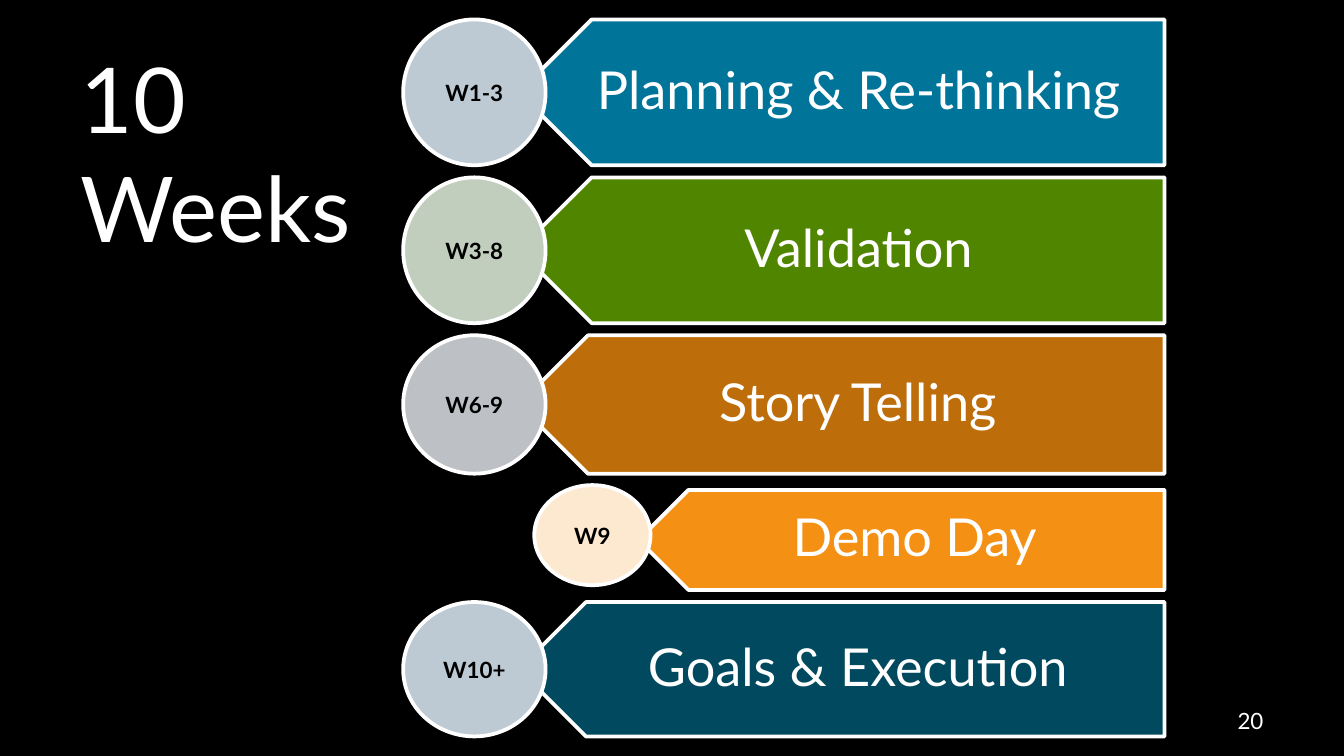
import pptx
import pptx.dml.color
import pptx.enum.shapes
import pptx.enum.text
import pptx.util

RGBColor = pptx.dml.color.RGBColor
MSO_SHAPE = pptx.enum.shapes.MSO_SHAPE
PP_ALIGN = pptx.enum.text.PP_ALIGN

BLACK = RGBColor(0x00, 0x00, 0x00)
WHITE = RGBColor(0xFF, 0xFF, 0xFF)
TEAL = RGBColor(0x00, 0x75, 0x99)
GREEN = RGBColor(0x50, 0x85, 0x00)
BROWN = RGBColor(0xBD, 0x6D, 0x09)
ORANGE = RGBColor(0xF4, 0x90, 0x14)
NAVY = RGBColor(0x00, 0x49, 0x5E)
PALE_BLUE = RGBColor(0xBD, 0xCA, 0xD4)
PALE_GREEN = RGBColor(0xC2, 0xCE, 0xBD)
PALE_GREY = RGBColor(0xBD, 0xC1, 0xC5)
PALE_ORANGE = RGBColor(0xFD, 0xE9, 0xD0)

FONT = "Lato"
EMU_PER_PX = 4572
SLIDE_SIZE = (2000, 1125)
RIGHT_EDGE = 1733

PHASES = [
    ("W1-3", "Planning & Re-thinking", TEAL, PALE_BLUE, (600, 29, 212, 217), 172, 0),
    ("W3-8", "Validation", GREEN, PALE_GREEN, (600, 264, 212, 217), 172, 0),
    ("W6-9", "Story Telling", BROWN, PALE_GREY, (600, 499, 212, 206), 172, 0),
    ("W9", "Demo Day", ORANGE, PALE_ORANGE, (795, 722, 173, 149), 155, 7),
    ("W10+", "Goals & Execution", NAVY, PALE_BLUE, (600, 896, 212, 200), 172, 0),
]


def px(*lengths):
    """Turn px lengths into a list of EMU."""
    return [pptx.util.Emu(length * EMU_PER_PX) for length in lengths]


def write(shape, text, size, color, align, bold=False, insets=(20, 10, 20, 10)):
    """Fill a shape with one formatted, vertically centred paragraph."""
    frame = shape.text_frame
    frame.word_wrap = True
    frame.auto_size = pptx.enum.text.MSO_AUTO_SIZE.NONE
    frame.vertical_anchor = pptx.enum.text.MSO_ANCHOR.MIDDLE
    frame.margin_left, frame.margin_top, frame.margin_right, frame.margin_bottom = px(*insets)
    paragraph = frame.paragraphs[0]
    paragraph.text = text
    paragraph.alignment = align
    paragraph.font.name = FONT
    paragraph.font.size = pptx.util.Pt(size)
    paragraph.font.bold = bold
    paragraph.font.color.rgb = color
    return paragraph


def add_outlined(slide, preset, box, color):
    """Add a filled preset shape with a white outline."""
    shape = slide.shapes.add_shape(preset, *px(*box))
    shape.shadow.inherit = False
    shape.fill.solid()
    shape.fill.fore_color.rgb = color
    shape.line.color.rgb = WHITE
    shape.line.width = pptx.util.Pt(2)
    return shape


def add_phase(slide, weeks, activity, bar_color, badge_color, badge_box, bar_shift, bar_drop):
    """Add a left-pointing bar, its label and the week badge over its tip."""
    left, top, width, height = badge_box
    bar_left, bar_top = left + bar_shift, top + bar_drop
    bar = add_outlined(slide, MSO_SHAPE.PENTAGON,
                       (bar_left, bar_top, RIGHT_EDGE - bar_left, height), bar_color)
    bar.rotation = 180

    label_left = bar_left + height * 16 // 100
    label = slide.shapes.add_textbox(
        *px(label_left, bar_top, RIGHT_EDGE - label_left, height))
    paragraph = write(label, activity, 28, WHITE, PP_ALIGN.CENTER, insets=(70, 30, 54, 30))
    paragraph.line_spacing = 0.9

    badge = add_outlined(slide, MSO_SHAPE.OVAL, badge_box, badge_color)
    write(badge, weeks, 12, BLACK, PP_ALIGN.CENTER, bold=True, insets=(0, 0, 0, 0))


def place_title(slide, box):
    """Move and format the title placeholder."""
    title = slide.shapes.title
    title.left, title.top, title.width, title.height = px(*box)
    write(title, "10\vWeeks", 48.6, WHITE, PP_ALIGN.LEFT)


def add_page_number(slide, box):
    """Add the page number at the right of its box."""
    write(slide.shapes.add_textbox(*px(*box)), "20", 12, WHITE, PP_ALIGN.RIGHT)


def main():
    """Build the ten-week programme slide."""
    deck = pptx.Presentation()
    deck.slide_width, deck.slide_height = px(*SLIDE_SIZE)
    slide = deck.slides.add_slide(deck.slide_layouts[5])
    slide.background.fill.solid()
    slide.background.fill.fore_color.rgb = BLACK
    place_title(slide, (100, 38, 534, 376))
    add_page_number(slide, (1434, 1043, 466, 60))
    for phase in PHASES:
        add_phase(slide, *phase)
    deck.save("out.pptx")


if __name__ == "__main__":
    main()
